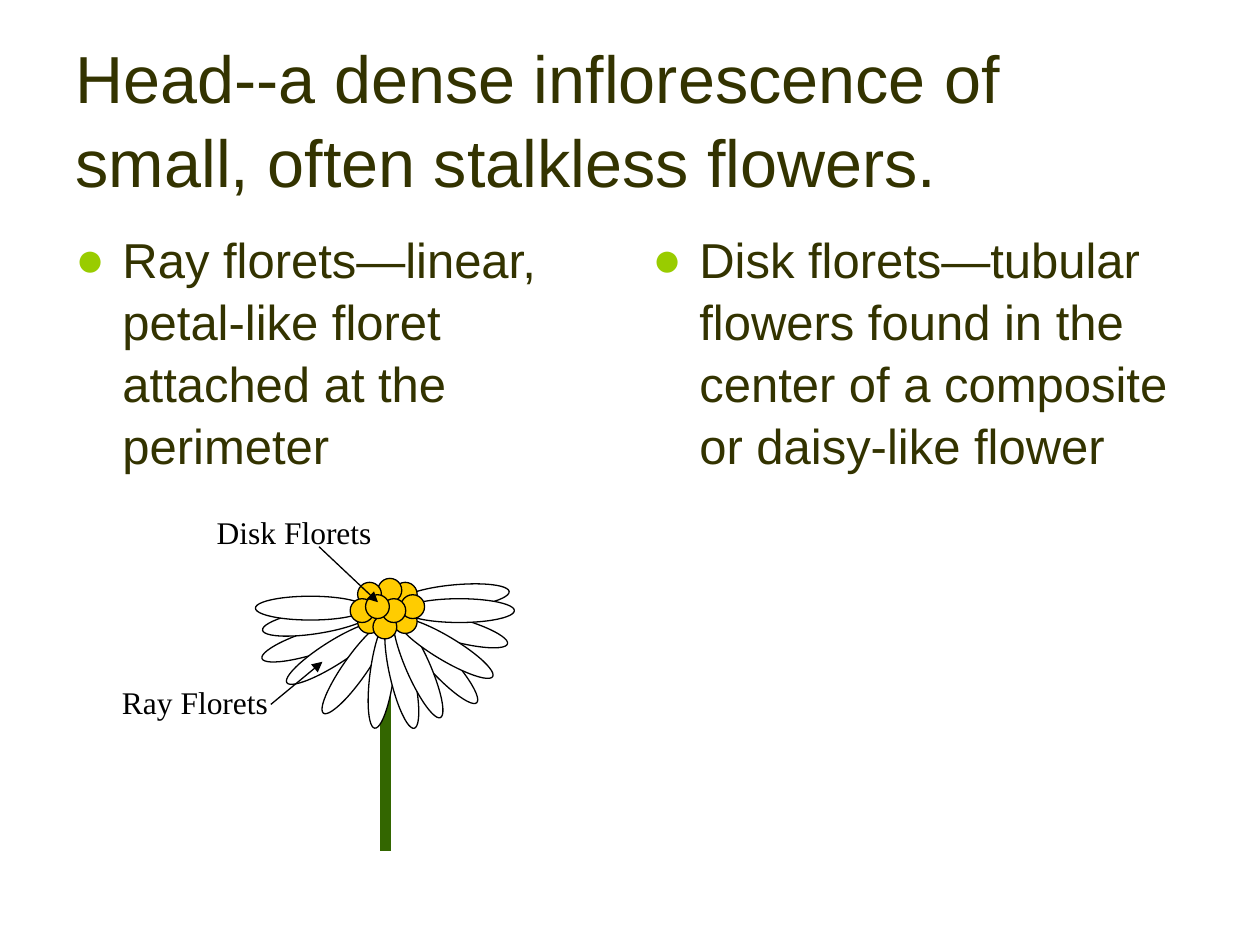
from lxml import etree
from pptx import Presentation
from pptx.dml.color import RGBColor
from pptx.enum.shapes import MSO_CONNECTOR, MSO_SHAPE
from pptx.enum.text import MSO_ANCHOR, PP_ALIGN
from pptx.oxml.ns import qn
from pptx.util import Cm, Pt

OVAL = MSO_SHAPE.OVAL
STRAIGHT = MSO_CONNECTOR.STRAIGHT
LEFT = PP_ALIGN.LEFT
TOP, MIDDLE = MSO_ANCHOR.TOP, MSO_ANCHOR.MIDDLE
TITLE_ONLY = 5

INK, BLACK, WHITE = "333300", "000000", "FFFFFF"
LIME, STEM_GREEN, GOLD = "99CC00", "336600", "FFCC00"

# Centre x, centre y (cm), rotation and fill of each petal, back to front
PETALS_BEHIND_STEM = [
    (6.34, 12.94, 342.5, None), (6.72, 13.17, 327.7, WHITE),
    (9.16, 12.69, 15.1, None), (9.16, 12.03, 354.6, None),
    (7.16, 13.47, 305.1, WHITE),
]
PETALS_BEFORE_STEM = [
    (7.70, 13.58, 97.6, WHITE), (8.86, 13.35, 47.4, WHITE),
    (8.10, 13.60, 77, WHITE), (8.43, 13.45, 66.2, WHITE),
    (8.98, 13.07, 30.9, WHITE), (9.26, 12.31, 0, WHITE),
    (6.39, 12.53, 351, WHITE), (6.26, 12.26, 0, WHITE),
]
DISK_FLORETS = [
    (8.17, 12.53), (8.17, 11.98), (7.86, 11.90), (7.45, 11.98), (7.45, 12.53),
    (8.32, 12.23), (7.30, 12.31), (7.76, 12.64), (7.94, 12.31), (7.61, 12.23),
]


def color(value):
    return RGBColor.from_string(value)


class FlowerSlide:
    heading_font = "Arial"
    label_font = "Times New Roman"
    line_spacing = 1.05

    def __init__(self, deck):
        self.page = deck.slides.add_slide(deck.slide_layouts[TITLE_ONLY])
        self.drawing = self.page.shapes.add_group_shape().shapes

    def add_words(self, box, text, size, font, ink):
        para = box.text_frame.paragraphs[0]
        para.alignment = LEFT
        span = para.add_run()
        span.text = text
        span.font.size = Pt(size)
        span.font.name = font
        span.font.color.rgb = color(ink)
        return para

    def title(self, text):
        box = self.page.shapes.title
        box.left, box.top, box.width, box.height = Cm(1.27), Cm(0.76), Cm(22.86), Cm(3.18)
        box.text_frame.word_wrap = True
        box.text_frame.vertical_anchor = MIDDLE
        para = self.add_words(box, text, 38, self.heading_font, INK)
        para.line_spacing = self.line_spacing

    def bullet_column(self, left, text):
        box = self.page.shapes.add_textbox(Cm(left), Cm(4.45), Cm(11.23), Cm(12.57))
        box.text_frame.word_wrap = True
        box.text_frame.vertical_anchor = TOP
        para = self.add_words(box, text, 28, self.heading_font, INK)
        para.line_spacing = self.line_spacing
        settings = para._p.get_or_add_pPr()
        settings.set("marL", str(Cm(0.95)))
        settings.set("indent", str(Cm(-0.95)))
        bullet_color = etree.SubElement(settings, qn("a:buClr"))
        etree.SubElement(bullet_color, qn("a:srgbClr"), val=LIME)
        etree.SubElement(settings, qn("a:buFont"), typeface=self.heading_font)
        etree.SubElement(settings, qn("a:buChar"), char="●")

    def ellipse(self, x, y, width, height, fill, angle=0):
        shape = self.drawing.add_shape(
            OVAL, Cm(x - width / 2), Cm(y - height / 2), Cm(width), Cm(height))
        shape.shadow.inherit = False
        shape.rotation = angle
        if fill:
            shape.fill.solid()
            shape.fill.fore_color.rgb = color(fill)
        else:
            shape.fill.background()
        shape.line.color.rgb = color(BLACK)
        shape.line.width = Pt(0.75)

    def petals(self, places):
        for x, y, angle, fill in places:
            self.ellipse(x, y, 2.22, 0.48, fill, angle)

    def disk_floret(self, x, y):
        self.ellipse(x, y, 0.48, 0.48, GOLD)

    def line(self, start, end, ink=BLACK, weight=0.75, arrow=False):
        line = self.drawing.add_connector(STRAIGHT, *map(Cm, start + end))
        line.line.color.rgb = color(ink)
        line.line.width = Pt(weight)
        if arrow:
            outline = line._element.spPr.find(qn("a:ln"))
            etree.SubElement(outline, qn("a:tailEnd"), type="triangle")
        etree.SubElement(line._element.spPr, qn("a:effectLst"))

    def label(self, left, top, text):
        box = self.drawing.add_textbox(Cm(left), Cm(top), Cm(3.33), Cm(0.97))
        frame = box.text_frame
        frame.word_wrap = True
        frame.margin_left = frame.margin_right = Cm(0.1)
        frame.margin_top = frame.margin_bottom = Cm(0.1)
        self.add_words(box, text, 18, self.label_font, BLACK)


def main():
    deck = Presentation()
    deck.slide_width, deck.slide_height = Cm(25.4), Cm(19.05)
    slide = FlowerSlide(deck)

    # Title and the two definitions
    slide.title("Head--a dense inflorescence of small, often stalkless flowers.")
    slide.bullet_column(1.27, "Ray florets—linear, petal-like floret attached at the perimeter")
    slide.bullet_column(
        12.9, "Disk florets—tubular flowers found in the center of a composite or daisy-like flower")

    # Petals and stem
    slide.petals(PETALS_BEHIND_STEM)
    slide.line((7.77, 12.62), (7.77, 17.15), STEM_GREEN, 6)
    slide.petals(PETALS_BEFORE_STEM)

    # Disk, with its front floret drawn between the two arrows
    for x, y in DISK_FLORETS[:-1]:
        slide.disk_floret(x, y)
    slide.label(4.27, 10.24, "Disk Florets")
    slide.label(2.36, 13.67, "Ray Florets")
    slide.line((5.46, 14.2), (6.5, 13.34), arrow=True)
    slide.disk_floret(*DISK_FLORETS[-1])
    slide.line((6.43, 11.02), (7.62, 12.14), arrow=True)

    deck.save("out.pptx")


if __name__ == "__main__":
    main()
